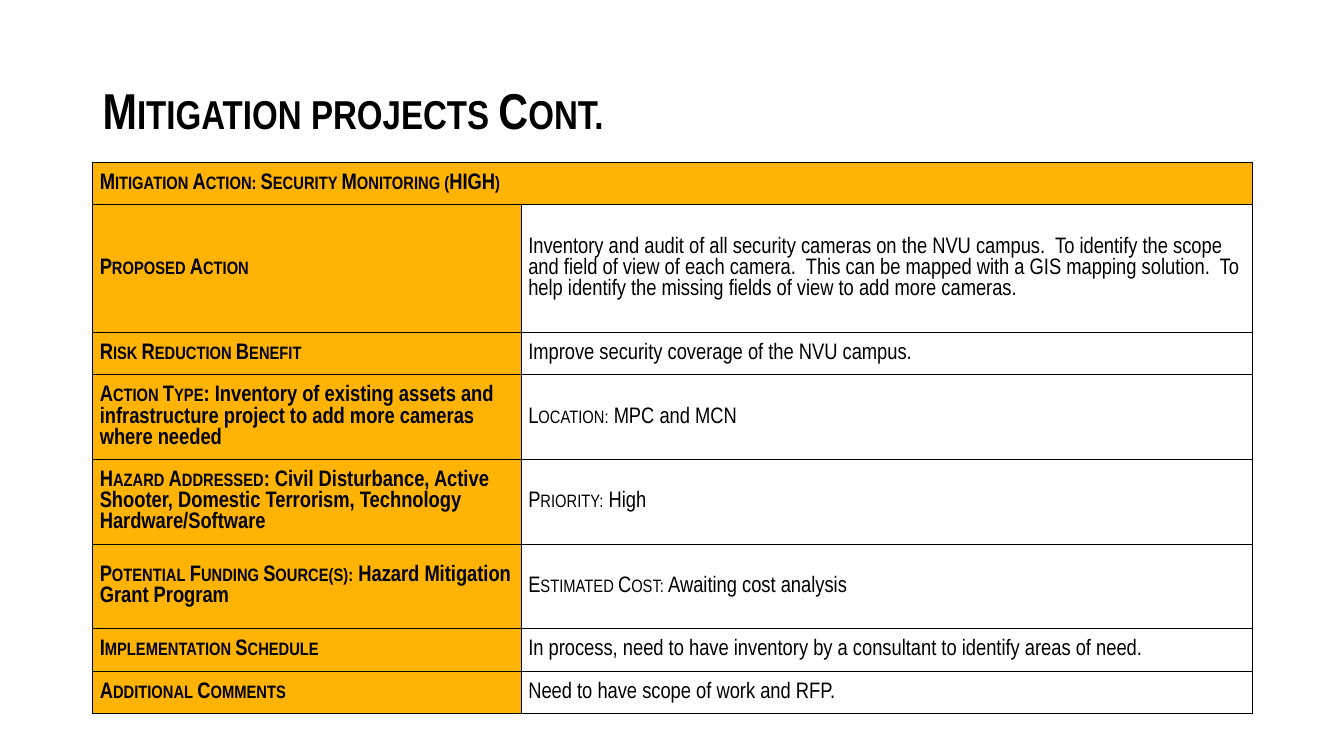
"""Build the slide on the security monitoring mitigation action."""
from lxml import etree
from pptx import Presentation
from pptx.dml.color import RGBColor
from pptx.enum.text import MSO_ANCHOR, PP_ALIGN
from pptx.oxml.ns import qn
from pptx.util import Inches, Pt

MIDDLE = MSO_ANCHOR.MIDDLE
LEFT, JUSTIFY = PP_ALIGN.LEFT, PP_ALIGN.JUSTIFY

HEADING = "Mitigation Action: Security Monitoring (HIGH)"
COLUMN_WIDTHS = [4.25, 7.25]
ROW_HEIGHTS = [0.42, 1.27, 0.42, 0.84, 0.84, 0.84, 0.42, 0.42]
DETAILS = [
    (("Proposed Action", ""),
     ("", "Inventory and audit of all security cameras on the NVU campus.  "
          "To identify the scope and field of view of each camera.  This can be "
          "mapped with a GIS mapping solution.  To help identify the missing "
          "fields of view to add more cameras.")),
    (("Risk Reduction Benefit", ""),
     ("", "Improve security coverage of the NVU campus.")),
    (("Action Type", ": Inventory of existing assets and infrastructure project "
                     "to add more cameras where needed"),
     ("Location:", " MPC and MCN")),
    (("Hazard Addressed", ": Civil Disturbance, Active Shooter, Domestic Terrorism, "
                          "Technology Hardware/Software"),
     ("Priority:", " High")),
    (("Potential Funding Source(s):", " Hazard Mitigation Grant Program"),
     ("Estimated Cost:", " Awaiting cost analysis")),
    (("Implementation Schedule", ""),
     ("", "In process, need to have inventory by a consultant to identify areas "
          "of need.")),
    (("Additional Comments", ""),
     ("", "Need to have scope of work and RFP.")),
]


def color(hex_string):
    return RGBColor.from_string(hex_string)


def add_text(paragraph, text, *, font, ink, size, bold=False, small_caps=False):
    run = paragraph.add_run()
    run.text = text
    run.font.name = font
    run.font.size = Pt(size)
    run.font.bold = bold
    run.font.color.rgb = color(ink)
    if small_caps:
        run.font._element.set("cap", "small")


class ProjectSlide:
    font = "Arial Narrow"
    ink = "000000"
    gold = "FFB305"

    def __init__(self, presentation):
        self.slide = presentation.slides.add_slide(presentation.slide_layouts[6])

    def title(self, text, left, top, width, height):
        box = self.slide.shapes.add_textbox(
            Inches(left), Inches(top), Inches(width), Inches(height))
        frame = box.text_frame
        frame.word_wrap = True
        frame.vertical_anchor = MIDDLE
        paragraph = frame.paragraphs[0]
        paragraph.line_spacing = 0.9
        add_text(paragraph, text, font=self.font, ink=self.ink, size=36,
                 bold=True, small_caps=True)

    def border(self, cell):
        properties = cell._tc.get_or_add_tcPr()
        for side in ("a:lnL", "a:lnR", "a:lnT", "a:lnB"):
            line = etree.SubElement(properties, qn(side), w=str(Pt(1)))
            fill = etree.SubElement(line, qn("a:solidFill"))
            etree.SubElement(fill, qn("a:srgbClr"), val=self.ink)

    def cell(self, cell, label="", detail="", highlighted=False, align=LEFT):
        self.border(cell)
        if highlighted:
            cell.fill.solid()
            cell.fill.fore_color.rgb = color(self.gold)
        else:
            cell.fill.background()
        cell.vertical_anchor = MIDDLE
        cell.margin_left = cell.margin_right = Inches(0.07)
        cell.margin_top = cell.margin_bottom = 0
        paragraph = cell.text_frame.paragraphs[0]
        paragraph.alignment = align
        if highlighted or not label:
            paragraph.space_before = paragraph.space_after = Pt(6)
        for text, small_caps in ((label, True), (detail, False)):
            if text:
                add_text(paragraph, text, font=self.font, ink=self.ink, size=16,
                         bold=highlighted, small_caps=small_caps)

    def table(self, heading, details, left, top):
        table = self.slide.shapes.add_table(
            len(ROW_HEIGHTS), len(COLUMN_WIDTHS), Inches(left), Inches(top),
            Inches(sum(COLUMN_WIDTHS)), Inches(sum(ROW_HEIGHTS))).table
        table.first_row = table.horz_banding = False
        for column, width in zip(table.columns, COLUMN_WIDTHS):
            column.width = Inches(width)
        for row, height in zip(table.rows, ROW_HEIGHTS):
            row.height = Inches(height)
        table.cell(0, 0).merge(table.cell(0, 1))
        self.cell(table.cell(0, 0), heading, highlighted=True, align=JUSTIFY)
        self.cell(table.cell(0, 1), highlighted=True)
        for row, (topic, answer) in enumerate(details, start=1):
            self.cell(table.cell(row, 0), *topic, highlighted=True)
            self.cell(table.cell(row, 1), *answer)


def main():
    presentation = Presentation()
    presentation.slide_width = Inches(13.33)
    presentation.slide_height = Inches(7.5)
    projects = ProjectSlide(presentation)
    projects.title("Mitigation projects Cont.", 0.92, 0.4, 11.5, 1.45)
    projects.table(HEADING, DETAILS, 0.92, 1.61)
    presentation.save("out.pptx")


if __name__ == "__main__":
    main()
